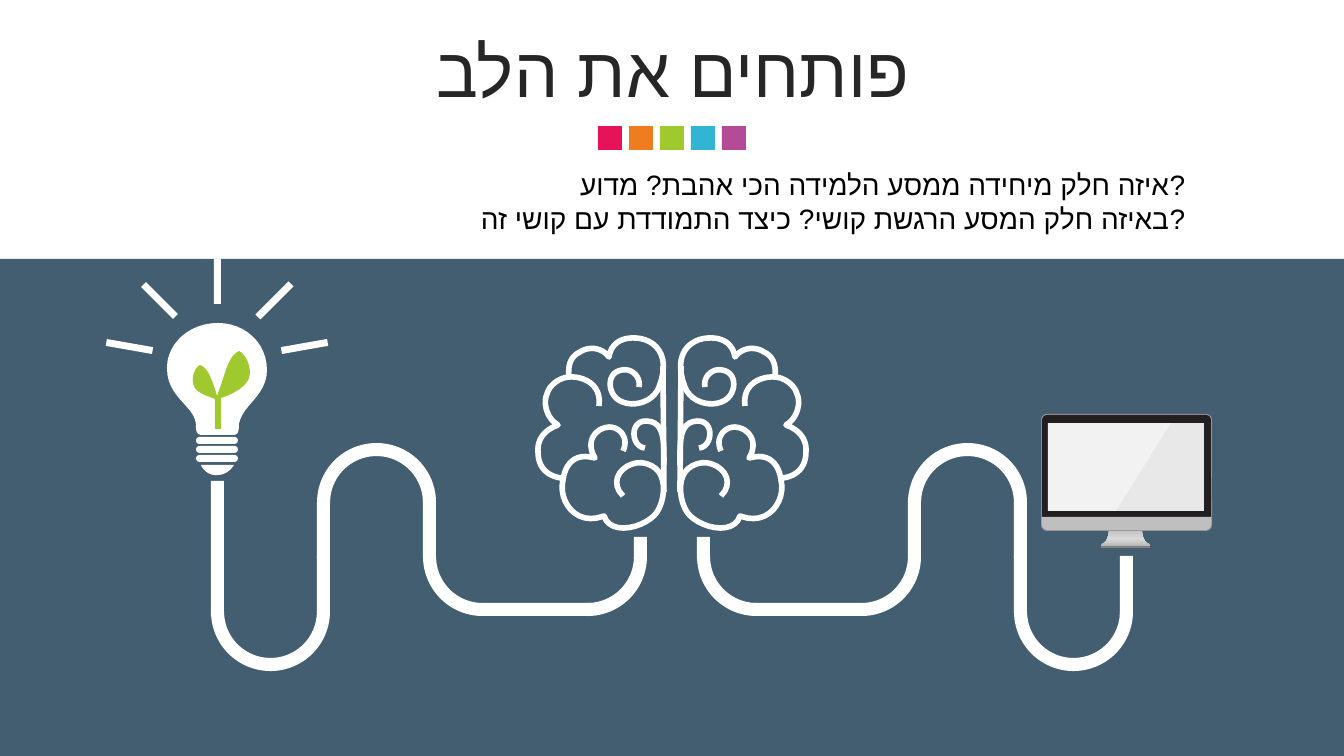
from lxml import etree
from pptx import Presentation
from pptx.dml.color import RGBColor
from pptx.enum.shapes import MSO_CONNECTOR, MSO_SHAPE
from pptx.enum.text import MSO_ANCHOR, PP_ALIGN
from pptx.oxml import parse_xml
from pptx.oxml.ns import qn
from pptx.util import Pt

RECT = MSO_SHAPE.RECTANGLE
ROUND = MSO_SHAPE.ROUNDED_RECTANGLE
ROUND_TOP = MSO_SHAPE.ROUND_2_SAME_RECTANGLE
ARC = MSO_SHAPE.BLOCK_ARC
STRAIGHT = MSO_CONNECTOR.STRAIGHT
CENTER, RIGHT = PP_ALIGN.CENTER, PP_ALIGN.RIGHT
TOP, MIDDLE = MSO_ANCHOR.TOP, MSO_ANCHOR.MIDDLE

W, H = 1344, 756
PX = 914400 / 100.8
FONT = "Arial"
COLORS = {
    "pink": "E61358", "orange": "ED7D1F", "green": "A0C82F", "blue": "32B5D3",
    "purple": "B44B97", "slate": "435E71", "white": "FFFFFF", "title": "262626",
    "black": "000000", "edge": "999999", "bezel": "231F20", "foot": "808080",
    "chin": "BFBFBF", "shine": "D9D9D9", "screen": "F2F2F2",
}

TITLE = ["פותחים את הלב"]
QUESTIONS = [
    "איזה חלק מיחידה ממסע הלמידה הכי אהבת? מדוע?",
    "באיזה חלק המסע הרגשת קושי? כיצד התמודדת עם קושי זה?",
]
SQUARES = ["pink", "orange", "green", "blue", "purple"]

RAYS = [(214, 259, 45, 0), (156, 278, 45, 135), (126, 323, 47, 280),
        (271, 277, 47, 45), (301, 323, 47, 80)]
BULB_CAP = [(201, 465), (234, 465), (231, 470, 225, 475, 218, 475),
            (211, 476, 204, 472, 201, 465)]
BULB_GLASS = [(218, 323), (245, 323, 267, 343, 267, 370), (267, 396, 243, 404, 239, 424),
              (239, 432, 238, 435, 233, 435), (201, 435), (196, 434, 196, 430, 196, 424),
              (194, 405, 167, 398, 167, 368), (167, 343, 190, 323, 218, 323)]
SPROUT = [(239, 351), (247, 355, 252, 369, 249, 378), (247, 384, 240, 390, 229, 395),
          (221, 398), (221, 429), (215, 429), (215, 399), (210, 397),
          (201, 394, 195, 390, 194, 386), (191, 379, 194, 368, 200, 365),
          (208, 368, 211, 378, 215, 389), (217, 396), (221, 385),
          (226, 370, 229, 356, 239, 351)]

BRAIN_FOLDS = [
    [(705, 387), (703, 377, 712, 368, 722, 370), (736, 372, 737, 389, 728, 398),
     (716, 409, 691, 404, 685, 387), (672, 354, 690, 339, 708, 338),
     (723, 337, 733, 344, 735, 357), (743, 346, 757, 347, 764, 352),
     (775, 357, 776, 368, 775, 378)],
    [(745, 406), (742, 384, 761, 376, 775, 377), (786, 378, 795, 386, 797, 394),
     (801, 402, 798, 418, 786, 425), (800, 430, 807, 440, 806, 452),
     (806, 467, 797, 476, 783, 478)],
    [(721, 451), (715, 439, 723, 427, 735, 427), (749, 428, 759, 442, 749, 458),
     (770, 452, 779, 465, 781, 480), (786, 500, 769, 527, 740, 516),
     (733, 537, 697, 527, 687, 512), (680, 502, 675, 475, 692, 466),
     (712, 454, 740, 477, 721, 496)],
    [(680, 465), (680, 442, 679, 422, 697, 421), (715, 420, 713, 447, 699, 448)],
]
BRAIN_SPINE = (681, 366, 680, 492)

CABLE_BARS = [(1014, 556, 13, 57), (908, 499, 13, 59), (1014, 502, 13, 56),
              (753, 603, 109, 13), (697, 537, 13, 22)]
CABLE_ENDS = {False: (1120, 556, 13, 60), True: (1120, 481, 13, 135)}
ARC_SIZE = 119
HALF, QUARTER = (108, 0, 0.11), (162, 0, 0.11)
CABLE_ARCS = [(1014, 552, HALF, 180, 180), (908, 443, HALF, 0, 0),
              (802, 497, QUARTER, 90, 180), (697, 497, QUARTER, 180, 90)]

STAND = [(1145, 541), (1142, 537, 1142, 529, 1142, 529), (1109, 529),
         (1109, 529, 1109, 537, 1106, 541), (1102, 545, 1097, 548, 1106, 548),
         (1145, 548), (1155, 548, 1149, 545, 1145, 541)]
STAND_STOPS = [(0, "chin"), (53, "shine"), (83, "chin"), (100, "chin")]
MONITOR = [
    (ROUND, 1041, 414, 171, 117, "edge", (0.05,)),
    (RECT, 1188, 529, 11, 2, "edge", ()),
    (ROUND_TOP, 1042, 415, 169, 102, "bezel", (0.05, 0)),
    (RECT, 1101, 546, 49, 2, "foot", ()),
    (ROUND_TOP, 1042, 517, 169, 13, "chin", (0, 0.4)),
    (RECT, 1048, 423, 156, 88, "screen", ()),
]
GLARE = [(1171, 423), (1204, 423), (1204, 511), (1116, 511)]


def emu(*lengths):
    return [round(v * PX) for v in lengths]


def rgb(name):
    return RGBColor.from_string(COLORS[name])


def paint(sp, color):
    sp.shadow.inherit = False
    sp.fill.solid()
    sp.fill.fore_color.rgb = rgb(color)
    sp.line.fill.background()


def shape(parent, kind, x, y, w, h, color, adj=(), rot=0):
    sp = parent.shapes.add_shape(kind, *emu(x, y, w, h))
    for i, value in enumerate(adj):
        sp.adjustments[i] = value
    sp.rotation = rot
    paint(sp, color)
    return sp


def flatten(path_data, steps=12):
    points = [path_data[0]]
    for seg in path_data[1:]:
        if len(seg) == 2:
            points.append(seg)
            continue
        (x0, y0), (x1, y1, x2, y2, x3, y3) = points[-1], seg
        for i in range(1, steps + 1):
            t = i / steps
            a, b, c, d = (1 - t) ** 3, 3 * t * (1 - t) ** 2, 3 * t * t * (1 - t), t ** 3
            points.append((a * x0 + b * x1 + c * x2 + d * x3,
                           a * y0 + b * y1 + c * y2 + d * y3))
    return points


def outline(parent, path_data, color, stroke=None, mirror=False):
    points = [emu(W - x if mirror else x, y) for x, y in flatten(path_data)]
    fb = parent.shapes.build_freeform(*points[0])
    fb.add_line_segments(points[1:], close=stroke is None)
    sp = fb.convert_to_shape()
    paint(sp, color)
    if stroke:
        sp.fill.background()
        sp.line.color.rgb = rgb(color)
        sp.line.width = Pt(stroke)
    return sp


def text(s, box, lines, size, color, align, anchor, spacing=None):
    tf = s.shapes.add_textbox(*emu(*box)).text_frame
    tf.word_wrap = True
    tf.vertical_anchor = anchor
    for i, line in enumerate(lines):
        p = tf.add_paragraph() if i else tf.paragraphs[0]
        p.alignment = align
        p.line_spacing = spacing
        r = p.add_run()
        r.text = line
        r.font.size = Pt(size)
        r.font.name = FONT
        r.font.color.rgb = rgb(color)
        etree.SubElement(r.font._element, qn("a:cs")).set("typeface", FONT)


def draw_brain_half(s, mirror):
    half = s.shapes.add_group_shape()
    for fold in BRAIN_FOLDS:
        outline(half, fold, "white", 4, mirror)
    x1, y1, x2, y2 = BRAIN_SPINE
    if mirror:
        x1, x2 = W - x1, W - x2
    spine = half.shapes.add_connector(STRAIGHT, *emu(x1, y1, x2, y2))
    spine.line.color.rgb = rgb("white")
    spine.line.width = Pt(4)
    etree.SubElement(spine._element.spPr, qn("a:effectLst"))


def draw_cable(s, mirror):
    cable = s.shapes.add_group_shape()
    for x, y, w, h in [CABLE_ENDS[mirror]] + CABLE_BARS:
        shape(cable, RECT, W - x - w if mirror else x, y, w, h, "white")
    for x, y, adj, rot, mirror_rot in CABLE_ARCS:
        shape(cable, ARC, W - x - ARC_SIZE if mirror else x, y, ARC_SIZE, ARC_SIZE,
              "white", adj, mirror_rot if mirror else rot)


def draw_bulb(s):
    bulb = s.shapes.add_group_shape()
    for i in range(3):
        shape(bulb, ROUND, 196, 437 + 9 * i, 42, 7, "white", (0.5,))
    outline(bulb, BULB_CAP, "white")
    outline(bulb, BULB_GLASS, "white")
    for x, y, h, rot in RAYS:
        shape(bulb, RECT, x, y, 7, h, "white", rot=rot)


def draw_monitor(s):
    monitor = s.shapes.add_group_shape()
    stand = outline(monitor, STAND, "chin")
    stops = "".join(f'<a:gs pos="{pos * 1000}"><a:srgbClr val="{COLORS[c]}"/></a:gs>'
                    for pos, c in STAND_STOPS)
    solid = stand._element.spPr.find(qn("a:solidFill"))
    solid.getparent().replace(solid, parse_xml(
        '<a:gradFill xmlns:a="http://schemas.openxmlformats.org/drawingml/2006/main">'
        f'<a:gsLst>{stops}</a:gsLst><a:lin ang="5400000" scaled="0"/></a:gradFill>'))
    for kind, x, y, w, h, color, adj in MONITOR:
        shape(monitor, kind, x, y, w, h, color, adj)
    glare = outline(monitor, GLARE, "edge")
    clr = glare._element.spPr.find(qn("a:solidFill"))[0]
    etree.SubElement(clr, qn("a:alpha")).set("val", "10000")


def main():
    prs = Presentation()
    prs.slide_width, prs.slide_height = emu(W, H)
    s = prs.slides.add_slide(prs.slide_layouts[6])
    squares = s.shapes.add_group_shape()
    for i, color in enumerate(SQUARES):
        shape(squares, RECT, 598 + 31 * i, 126, 24, 24, color)
    shape(s, RECT, 0, 259, W, H - 259, "slate")
    draw_bulb(s)
    text(s, (35, 37, 1276, 80), TITLE, 50, "title", CENTER, MIDDLE, 0.8)
    for mirror in (False, True):
        draw_brain_half(s, mirror)
    outline(s, SPROUT, "green")
    for mirror in (False, True):
        draw_cable(s, mirror)
    draw_monitor(s)
    text(s, (203, 163, 992, 78), QUESTIONS, 20, "black", RIGHT, TOP)
    prs.save("out.pptx")


if __name__ == "__main__":
    main()
